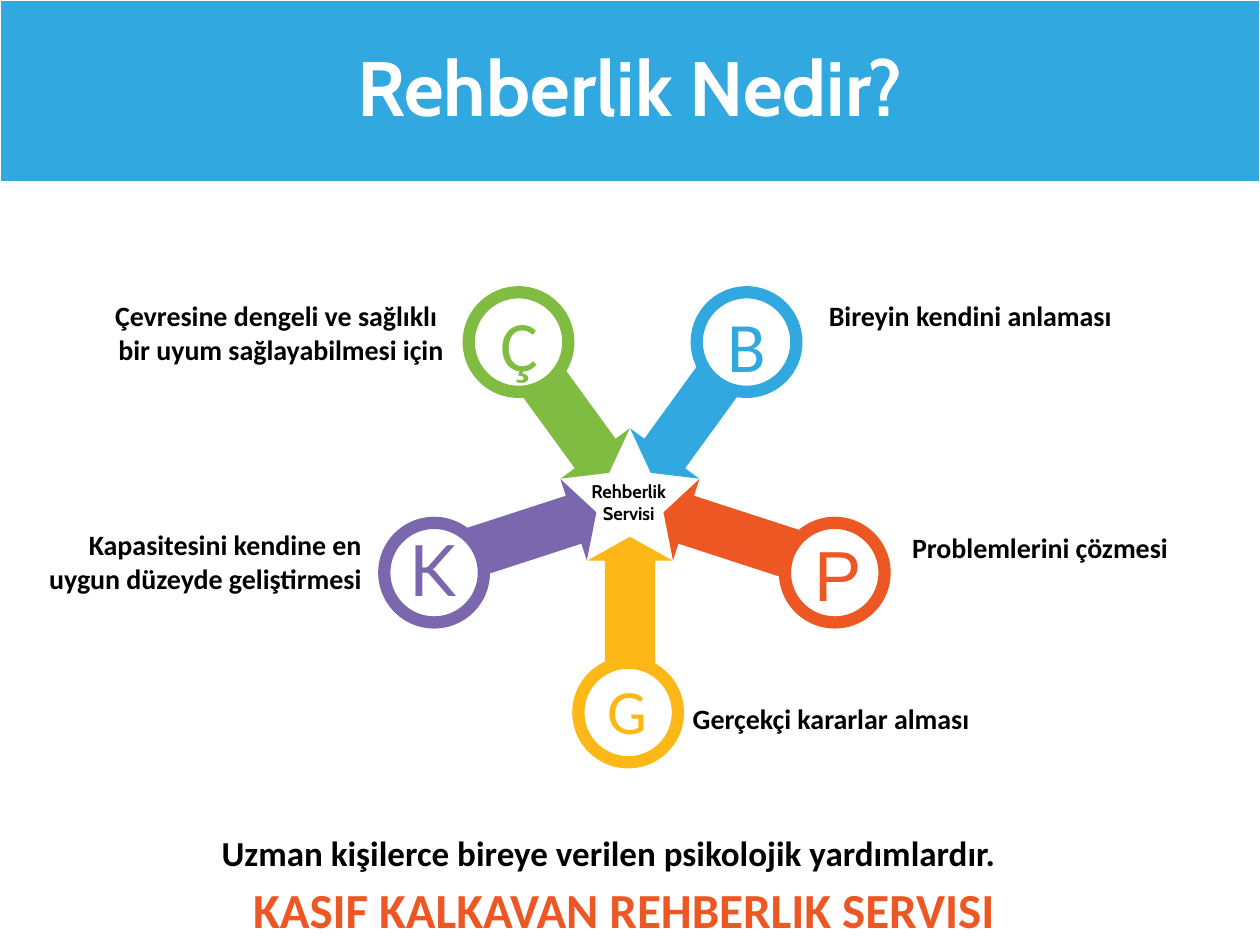
import math

import pptx
import pptx.dml.color
import pptx.enum.shapes
import pptx.enum.text
import pptx.util

Inches, Pt = pptx.util.Inches, pptx.util.Pt
ALIGN = pptx.enum.text.PP_ALIGN
ANCHOR = pptx.enum.text.MSO_ANCHOR
AUTO = pptx.enum.text.MSO_AUTO_SIZE
OVAL = pptx.enum.shapes.MSO_SHAPE.OVAL

COLORS = {
    "blue": "31A8DF", "green": "7FBC41", "purple": "7B67AD",
    "orange": "EC5724", "yellow": "FDB817", "white": "FFFFFF", "black": "000000",
}

# Five arrows point at the star, one every 72 degrees from the bottom
STAR_CENTER = (5, 3.98)
ARROW_COLORS = ["yellow", "orange", "blue", "green", "purple"]
ARROW = [(0, 0.28), (-0.34, 0.47), (-0.2, 0.47), (-0.2, 1.59),
         (0.2, 1.59), (0.2, 0.47), (0.34, 0.47)]

BADGE_SIZE, LETTER_SIZE = 0.79, 0.38
# letter, color, circle left and top, letter offset, font, size
BADGES = [
    ("Ç", "green", 3.72, 2.32, 0.21, 0.21, "Calibri", 40.5),
    ("B", "blue", 5.53, 2.32, 0.21, 0.22, "Calibri", 40.5),
    ("P", "orange", 6.23, 4.15, 0.23, 0.21, "Arial", 40.5),
    ("G", "yellow", 4.59, 5.26, 0.2, 0.18, "Calibri", 36),
    ("K", "purple", 3.05, 4.15, 0.2, 0.17, "Lato", 40.5),
]

# lines, box, alignment, wrap
LABELS = [
    (["Bireyin kendini anlaması"], (6.48, 2.32, 2.47, 0.37), ALIGN.LEFT, False),
    (["Problemlerini çözmesi"], (7.14, 4.16, 2.26, 0.37), ALIGN.LEFT, False),
    ([" Gerçekçi kararlar alması"], (5.35, 5.52, 2.47, 0.37), ALIGN.LEFT, False),
    (["Kapasitesini kendine en uygun düzeyde geliştirmesi"],
     (0.24, 4.14, 2.73, 0.64), ALIGN.RIGHT, True),
    ([" Çevresine dengeli ve sağlıklı ", "bir uyum sağlayabilmesi için"],
     (0.73, 2.32, 2.89, 0.64), ALIGN.RIGHT, False),
]


def rgb(name):
    return pptx.dml.color.RGBColor.from_string(COLORS[name])


def paint(sp, fill, line=None, width=0):
    sp.shadow.inherit = False
    sp.fill.solid()
    sp.fill.fore_color.rgb = rgb(fill)
    if line:
        sp.line.color.rgb = rgb(line)
        sp.line.width = Pt(width)
    else:
        sp.line.fill.background()


def write(tf, lines, size, font="Calibri", color="black", bold=True,
          align=ALIGN.LEFT, spacing=None):
    for i, text in enumerate(lines):
        p = tf.paragraphs[0] if i == 0 else tf.add_paragraph()
        p.alignment = align
        if spacing:
            p.line_spacing = spacing
        r = p.add_run()
        r.text = text
        r.font.size, r.font.name, r.font.bold = Pt(size), font, bold
        r.font.color.rgb = rgb(color)


def add_text(shapes, box, lines, size, wrap=False, **fmt):
    tf = shapes.add_textbox(*map(Inches, box)).text_frame
    tf.word_wrap = wrap
    tf.auto_size = AUTO.SHAPE_TO_FIT_TEXT
    write(tf, lines, size, **fmt)
    return tf


def add_title(s, text):
    sp = s.shapes.title
    sp.left, sp.top, sp.width, sp.height = map(Inches, (0, 0, 10, 1.45))
    paint(sp, "blue", "white", 1.5)
    sp.text_frame.vertical_anchor = ANCHOR.MIDDLE
    write(sp.text_frame, [text], 44, font="Cabin", color="white",
          align=ALIGN.CENTER, spacing=0.9)


def add_arrow(s, degrees, color):
    cos, sin = math.cos(math.radians(degrees)), math.sin(math.radians(degrees))
    cx, cy = STAR_CENTER
    points = [(Inches(cx + x * cos + y * sin), Inches(cy - x * sin + y * cos))
              for x, y in ARROW]
    fb = s.shapes.build_freeform(*points[0])
    fb.add_line_segments(points[1:], close=True)
    paint(fb.convert_to_shape(), color)


def add_badge(s, letter, color, left, top, dx, dy, font, size):
    shapes = s.shapes.add_group_shape().shapes
    box = (left, top, BADGE_SIZE, BADGE_SIZE)
    paint(shapes.add_shape(OVAL, *map(Inches, box)), "white", color, 7)
    tf = add_text(shapes, (left + dx, top + dy, LETTER_SIZE, LETTER_SIZE), [letter],
                  size, font=font, color=color, bold=False, align=ALIGN.CENTER)
    tf.auto_size = AUTO.NONE
    tf.vertical_anchor = ANCHOR.MIDDLE
    tf.margin_left = tf.margin_right = tf.margin_top = tf.margin_bottom = 0


def main():
    prs = pptx.Presentation()
    prs.slide_width, prs.slide_height = Inches(10), Inches(7.5)
    s = prs.slides.add_slide(prs.slide_layouts[5])
    add_title(s, "Rehberlik Nedir?")

    # Arrows around the star
    for i, color in enumerate(ARROW_COLORS):
        add_arrow(s, 72 * i, color)
    add_text(s.shapes, (4.55, 3.76, 0.88, 0.45), ["Rehberlik", "Servisi"], 10.5,
             font="Cabin", align=ALIGN.CENTER)

    # Labels and letter badges
    for lines, box, align, wrap in LABELS:
        add_text(s.shapes, box, lines, 16, wrap=wrap, align=align)
    for badge in BADGES:
        add_badge(s, *badge)

    # Closing lines
    add_text(s.shapes, (1.66, 6.55, 7.55, 0.44),
             ["Uzman kişilerce bireye verilen psikolojik yardımlardır."], 20, wrap=True)
    add_text(s.shapes, (1.87, 6.93, 6.16, 0.57), ["KASIF KALKAVAN REHBERLIK SERVISI"],
             28, color="orange", align=ALIGN.CENTER)

    prs.save("out.pptx")


if __name__ == "__main__":
    main()
